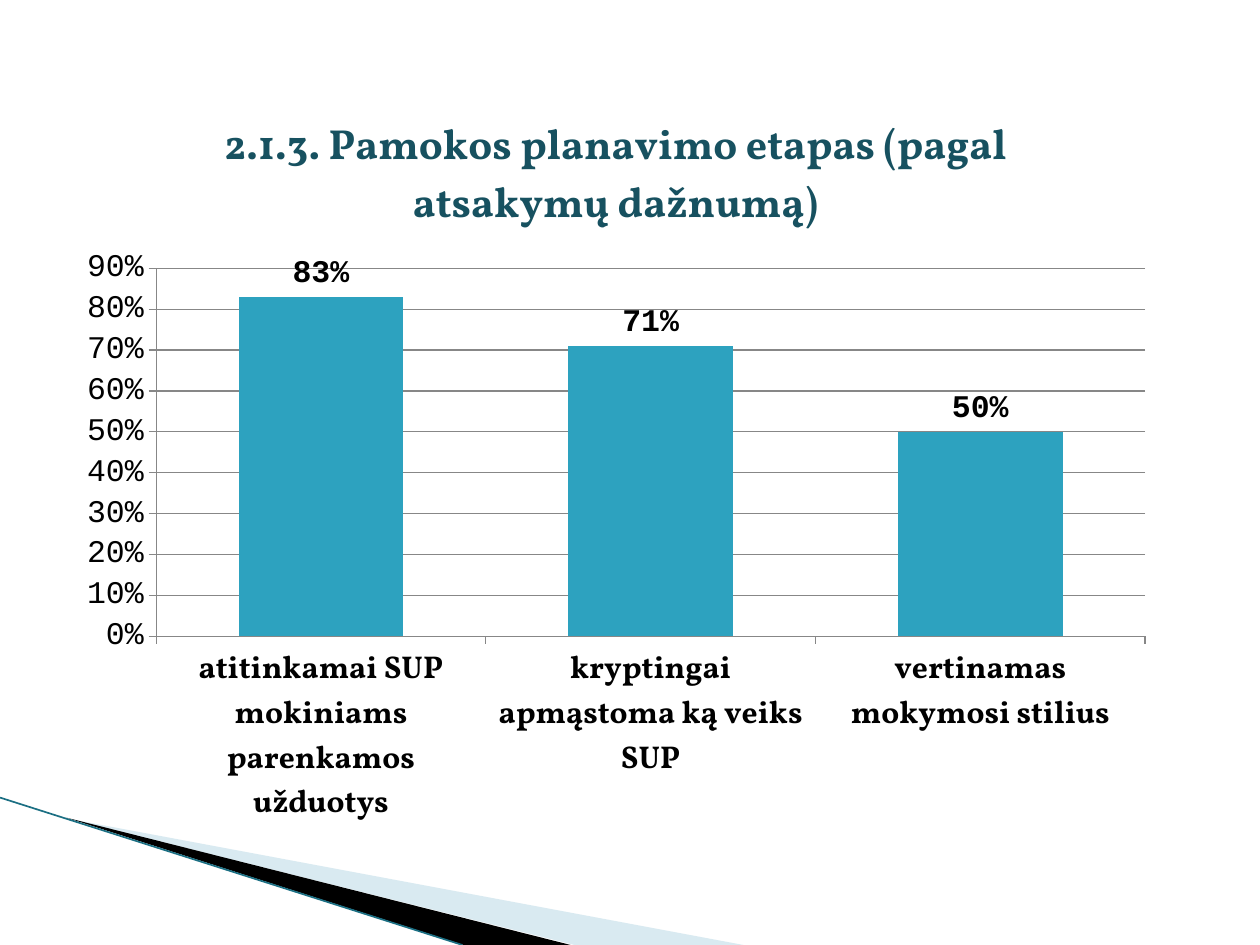
from lxml import etree
from pptx import Presentation
from pptx.chart.data import CategoryChartData
from pptx.dml.color import RGBColor
from pptx.enum.chart import XL_CHART_TYPE as ChartType
from pptx.enum.chart import XL_LABEL_POSITION as LabelPosition
from pptx.enum.chart import XL_TICK_MARK as TickMark
from pptx.enum.shapes import MSO_CONNECTOR as Connector
from pptx.oxml import parse_xml
from pptx.oxml.ns import nsdecls, qn
from pptx.util import Inches, Pt

# Content
TITLE = "2.1.3. Pamokos planavimo etapas (pagal atsakymų dažnumą)"
ANSWERS = [
    ("atitinkamai SUP mokiniams parenkamos užduotys", 0.83),
    ("kryptingai apmąstoma ką veiks SUP", 0.71),
    ("vertinamas mokymosi stilius", 0.50),
]
HEADING_FONT, NUMBER_FONT = "Vollkorn", "Courier New"
TEAL, DARK_TEAL, GRID, BLACK = "2DA2BF", "175160", "878787", "000000"

# Corner decoration: points, fill, opacity in percent
WEDGES = [
    ([(0.55, 6.5), (5.9, 7.5), (4.56, 7.5)], "A0CBDC", 40),
    ([(0.53, 6.49), (4.53, 7.5), (3.68, 7.5)], BLACK, 100),
]
EDGE = [(0, 6.33), (3.67, 7.5)]
EDGE_COLOR = "1B6F83"

# Chart frame and plot area: left, top, width, height
CHART_BOX = (0.51, 0.68, 8.75, 6.01)
PLOT_BOX = (1.24, 2.13, 7.85, 2.92)


def color(hex_code):
    return RGBColor.from_string(hex_code)


def format_font(font, size=18, bold=False, name=NUMBER_FONT, hex_code=BLACK):
    font.size, font.bold, font.name = Pt(size), bold, name
    font.color.rgb = color(hex_code)


def write_text(frame, text, **font_format):
    paragraph = frame.paragraphs[0]
    run = paragraph.add_run()
    run.text = text
    format_font(run.font, **font_format)


def add_wedge(slide, points, fill, opacity):
    corners = [(Inches(x), Inches(y)) for x, y in points]
    builder = slide.shapes.build_freeform(*corners[0])
    builder.add_line_segments(corners[1:], close=True)
    shape = builder.convert_to_shape()
    shape.shadow.inherit = False
    shape.line.fill.background()
    shape.fill.solid()
    shape.fill.fore_color.rgb = color(fill)
    if opacity < 100:
        fill_color = shape.fill._xPr.find(".//" + qn("a:srgbClr"))
        etree.SubElement(fill_color, qn("a:alpha"), val=str(opacity * 1000))


def add_edge(slide):
    (x1, y1), (x2, y2) = EDGE
    edge = slide.shapes.add_connector(
        Connector.STRAIGHT, Inches(x1), Inches(y1), Inches(x2), Inches(y2))
    edge.line.color.rgb = color(EDGE_COLOR)
    edge.line.width = Pt(0.95)
    etree.SubElement(edge._element.spPr, qn("a:effectLst"))


def place_plot(chart):
    left, top, width, height = CHART_BOX
    plot_left, plot_top, plot_width, plot_height = PLOT_BOX
    fractions = {
        "x": (plot_left - left) / width, "y": (plot_top - top) / height,
        "w": plot_width / width, "h": plot_height / height,
    }
    modes = '<c:xMode val="edge"/><c:yMode val="edge"/>'
    sizes = "".join(f'<c:{key} val="{value:.4f}"/>' for key, value in fractions.items())
    layout = parse_xml(
        f'<c:layout {nsdecls("c")}><c:manualLayout><c:layoutTarget val="inner"/>'
        f"{modes}{sizes}</c:manualLayout></c:layout>")
    plot_area = chart._chartSpace.chart.plotArea
    for old_layout in plot_area.findall(qn("c:layout")):
        plot_area.remove(old_layout)
    plot_area.insert(0, layout)


def add_answer_chart(slide):
    data = CategoryChartData(number_format="0%")
    data.categories = [answer for answer, _ in ANSWERS]
    data.add_series("Series 1", [share for _, share in ANSWERS])
    chart = slide.shapes.add_chart(
        ChartType.COLUMN_CLUSTERED, *map(Inches, CHART_BOX), data).chart
    chart.has_legend = False
    format_font(chart.font)
    chart.has_title = True
    write_text(chart.chart_title.text_frame, TITLE, size=24, bold=True,
               name=HEADING_FONT, hex_code=DARK_TEAL)
    chart.chart_title.include_in_layout = False

    # Columns and their labels
    plot = chart.plots[0]
    plot.gap_width = 100
    plot.vary_by_categories = False
    series_fill = plot.series[0].format.fill
    series_fill.solid()
    series_fill.fore_color.rgb = color(TEAL)
    labels = plot.series[0].data_labels
    labels.show_value = True
    labels.number_format, labels.number_format_is_linked = "0%", False
    labels.position = LabelPosition.OUTSIDE_END
    format_font(labels.font, bold=True)

    # Axes
    share_axis, answer_axis = chart.value_axis, chart.category_axis
    share_axis.minimum_scale, share_axis.maximum_scale = 0, 0.9
    share_axis.major_unit = 0.1
    share_axis.tick_labels.number_format = "0%"
    share_axis.tick_labels.number_format_is_linked = False
    share_axis.has_major_gridlines = True
    for axis in (share_axis, answer_axis):
        axis.major_tick_mark = TickMark.OUTSIDE
        axis.minor_tick_mark = TickMark.NONE
    format_font(share_axis.tick_labels.font)
    format_font(answer_axis.tick_labels.font, bold=True, name=HEADING_FONT)
    for item in (share_axis, answer_axis, share_axis.major_gridlines):
        item.format.line.color.rgb = color(GRID)
        item.format.line.width = Pt(0.75)
    place_plot(chart)


def main():
    presentation = Presentation()
    presentation.slide_width, presentation.slide_height = Inches(10), Inches(7.5)
    slide = presentation.slides.add_slide(presentation.slide_layouts[6])
    for wedge in WEDGES:
        add_wedge(slide, *wedge)
    add_edge(slide)
    add_answer_chart(slide)
    presentation.save("out.pptx")


if __name__ == "__main__":
    main()
